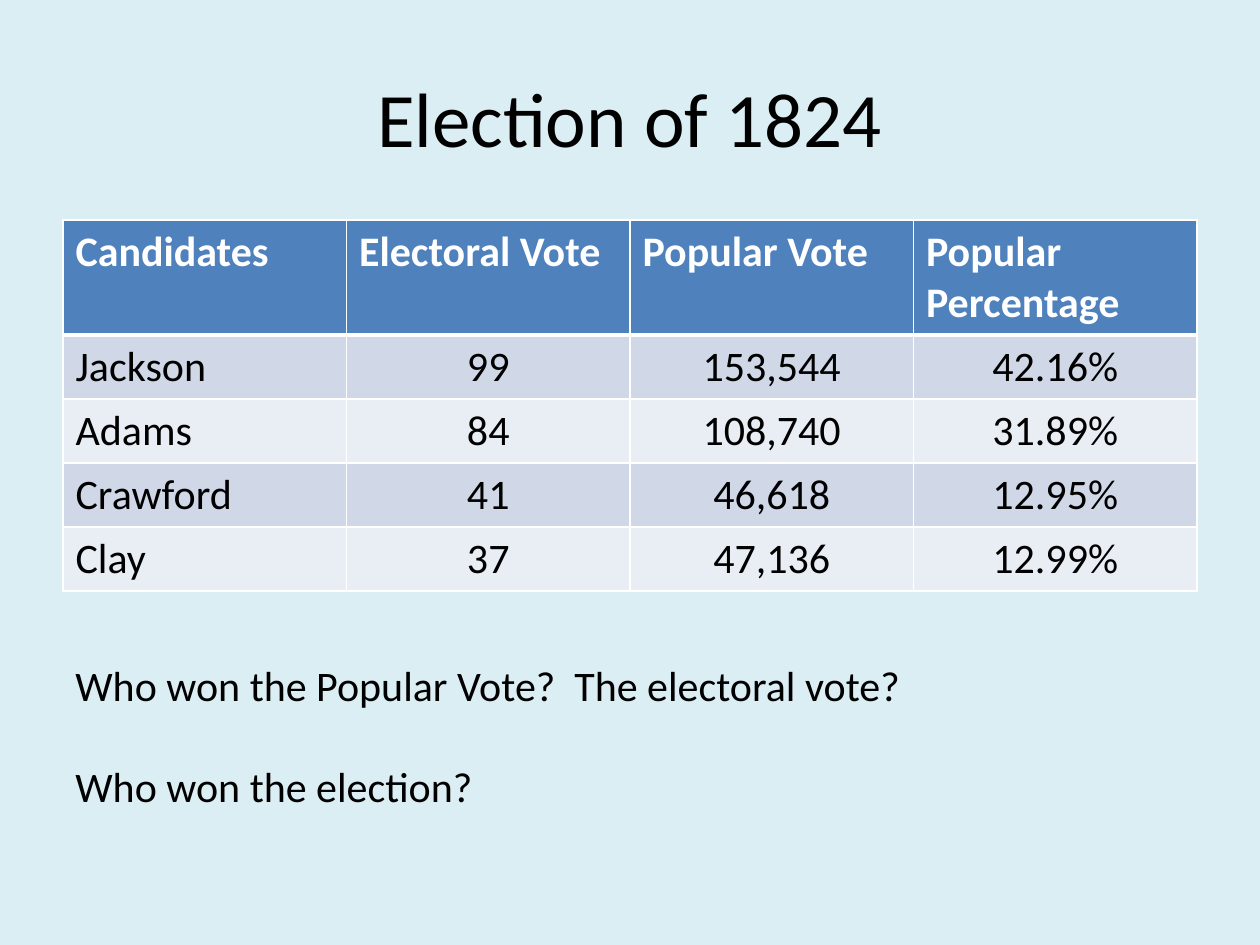
import pptx
import pptx.dml.color
import pptx.enum.text
import pptx.oxml
import pptx.oxml.ns
import pptx.util

EMU_PER_PX = 914400 / 126
ALIGN = pptx.enum.text.PP_ALIGN
ANCHOR = pptx.enum.text.MSO_ANCHOR
BLACK, WHITE = "000000", "FFFFFF"
HEADER_FILL = "4F81BD"
BAND_FILLS = ["D0D8E8", "E9EDF4"]
LEFT, WIDTH = 63, 1134
HEADER_HEIGHT, ROW_HEIGHT = 115, 64

RESULTS = [
    ["Candidates", "Electoral Vote", "Popular Vote", "Popular Percentage"],
    ["Jackson", "99", "153,544", "42.16%"],
    ["Adams", "84", "108,740", "31.89%"],
    ["Crawford", "41", "46,618", "12.95%"],
    ["Clay", "37", "47,136", "12.99%"],
]
QUESTIONS = ["Who won the Popular Vote?  The electoral vote?", "Who won the election?"]


def px(n):
    return pptx.util.Emu(round(n * EMU_PER_PX))


def rgb(color):
    return pptx.dml.color.RGBColor.from_string(color)


def write(p, text, size=24, color=BLACK, bold=False, align=ALIGN.LEFT):
    p.alignment = align
    r = p.add_run()
    r.text = text
    font = {"name": "Calibri", "size": pptx.util.Pt(size), "bold": bold}
    for name, value in font.items():
        setattr(r.font, name, value)
    r.font.color.rgb = rgb(color)


def add_text(slide, box, lines, anchor=ANCHOR.TOP, gap=0, **style):
    """Add a text box with one paragraph per line, gap points apart."""
    tf = slide.shapes.add_textbox(*map(px, box)).text_frame
    tf.word_wrap = True
    tf.vertical_anchor = anchor
    for i, line in enumerate(lines):
        p = tf.add_paragraph() if i else tf.paragraphs[0]
        if i:
            p.space_before = pptx.util.Pt(gap)
        write(p, line, **style)


def set_borders(cell, widths):
    """Draw white borders; widths maps the sides L, R, T, B to points."""
    tcPr = cell._tc.get_or_add_tcPr()
    for side, width in widths.items():
        tcPr.append(pptx.oxml.parse_xml(
            f'<a:ln{side} {pptx.oxml.ns.nsdecls("a")} w="{pptx.util.Pt(width)}">'
            f'<a:solidFill><a:srgbClr val="{WHITE}"/></a:solidFill></a:ln{side}>'))


def add_results_table(slide, top, rows):
    n_cols = len(rows[0])
    heights = [HEADER_HEIGHT] + [ROW_HEIGHT] * (len(rows) - 1)
    box = map(px, (LEFT, top, WIDTH, sum(heights)))
    table = slide.shapes.add_table(len(rows), n_cols, *box).table
    for col in table.columns:
        col.width = px(WIDTH / n_cols)
    for i, values in enumerate(rows):
        table.rows[i].height = px(heights[i])
        header = i == 0
        fill = HEADER_FILL if header else BAND_FILLS[(i - 1) % 2]
        for j, value in enumerate(values):
            cell = table.cell(i, j)
            set_borders(cell, {"L": 1, "R": 1, "T": 3 if i == 1 else 1,
                               "B": 3 if header else 1})
            cell.fill.solid()
            cell.fill.fore_color.rgb = rgb(fill)
            write(cell.text_frame.paragraphs[0], value,
                  color=WHITE if header else BLACK, bold=header,
                  align=ALIGN.LEFT if header or j == 0 else ALIGN.CENTER)


def main():
    prs = pptx.Presentation()
    prs.slide_width, prs.slide_height = px(1260), px(945)
    slide = prs.slides.add_slide(prs.slide_layouts[6])
    slide.background.fill.solid()
    slide.background.fill.fore_color.rgb = rgb("DBEEF4")

    add_text(slide, (LEFT, 38, WIDTH, 157), ["Election of 1824"],
             anchor=ANCHOR.MIDDLE, size=44, align=ALIGN.CENTER)
    add_results_table(slide, 220, RESULTS)
    add_text(slide, (LEFT, 653, WIDTH, 165), QUESTIONS, gap=29)
    prs.save("out.pptx")


if __name__ == "__main__":
    main()
